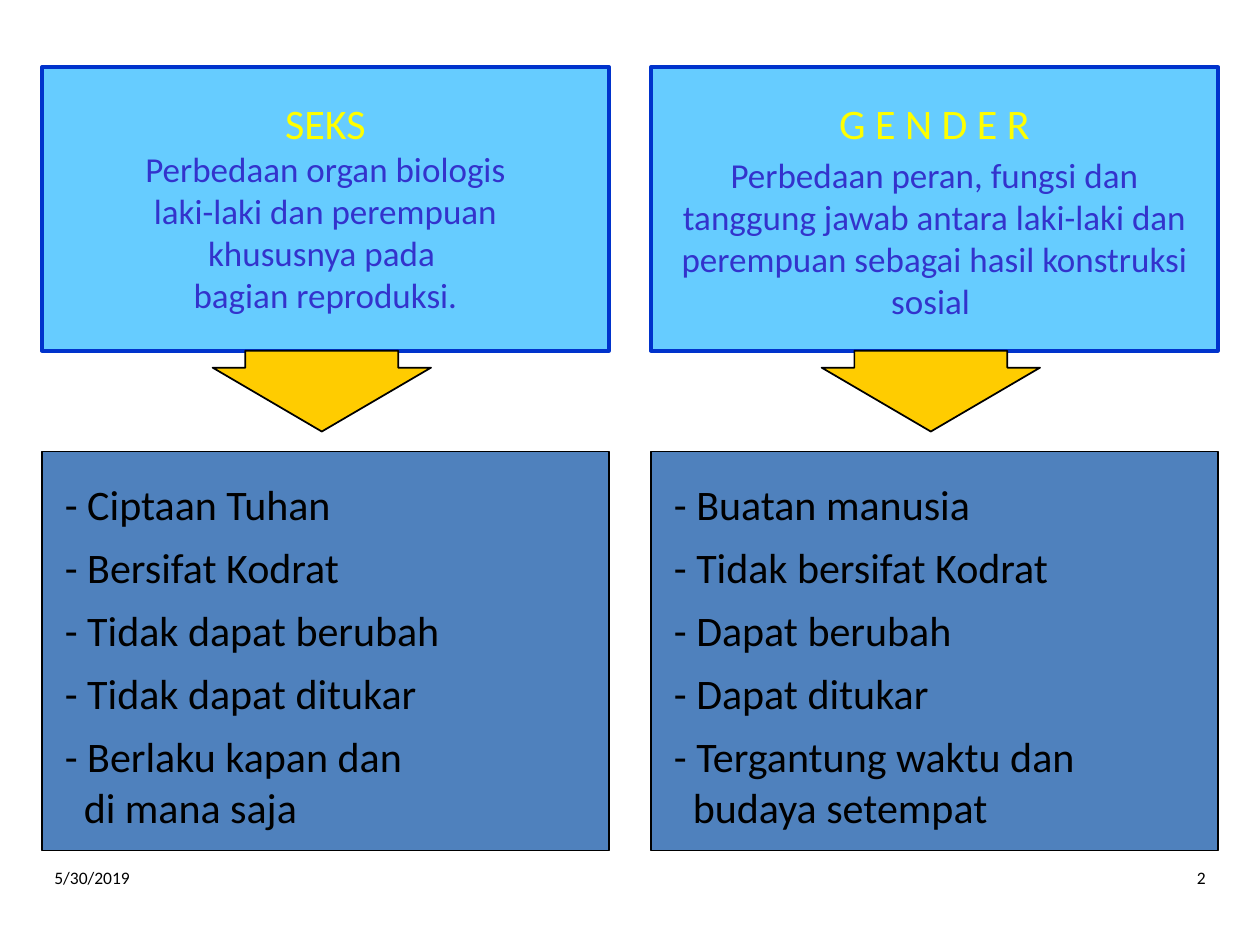
from pptx import Presentation, util as u
from pptx.dml.color import RGBColor
from pptx.enum import shapes, text

# Grid of 120 columns by 90 rows on a 10 x 7.5 inch slide
CELL = u.Inches(10) // 120
SHAPE = shapes.MSO_SHAPE
ALIGN = text.PP_ALIGN

HEADING = {"size": u.Pt(24), "color": "FFFF00"}
DEFINITION = {"size": u.Pt(20), "color": "3333CC"}
TRAIT = {"size": u.Pt(24), "color": "000000"}
FOOTER = {"size": u.Pt(10), "color": "000000"}

COLUMNS = [
    {
        "left": 4,
        "heading": "SEKS",
        "lines": ["Perbedaan organ biologis", "laki-laki dan perempuan",
                  "khususnya pada ", "bagian reproduksi."],
        "definition": None,
        "traits": [["- Ciptaan Tuhan"], ["- Bersifat Kodrat"],
                   ["- Tidak dapat berubah"], ["- Tidak dapat ditukar"],
                   ["- Berlaku kapan dan", "di mana saja"]],
    },
    {
        "left": 62,
        "heading": "G E N D E R",
        "lines": [],
        "definition": "Perbedaan peran, fungsi dan tanggung jawab antara "
                      "laki-laki dan perempuan sebagai hasil konstruksi sosial ",
        "traits": [["- Buatan manusia"], ["- Tidak bersifat Kodrat"],
                   ["- Dapat berubah"], ["- Dapat ditukar"],
                   ["- Tergantung waktu dan", "budaya setempat"]],
    },
]


def rgb(value):
    return RGBColor.from_string(value)


def grid(*cells):
    return [int(cell * CELL) for cell in cells]


def write(frame, lines, align=ALIGN.LEFT):
    """Fill a text frame with one paragraph per (words, format) pair."""
    for index, (words, style) in enumerate(lines):
        paragraph = frame.paragraphs[0] if index == 0 else frame.add_paragraph()
        paragraph.alignment = align
        run = paragraph.add_run()
        run.text = words
        for name, value in {"name": "Calibri", "size": style["size"]}.items():
            setattr(run.font, name, value)
        run.font.color.rgb = rgb(style["color"])


def add_text(slide, box, lines, align=ALIGN.LEFT):
    frame = slide.shapes.add_textbox(*grid(*box)).text_frame
    frame.word_wrap = True
    write(frame, lines, align)
    return frame


def add_block(slide, kind, box, fill, line, width):
    shape = slide.shapes.add_shape(kind, *grid(*box))
    shape.shadow.inherit = False
    shape.fill.solid()
    shape.fill.fore_color.rgb = rgb(fill)
    shape.line.color.rgb = rgb(line)
    shape.line.width = u.Pt(width)
    return shape


def add_header(slide, box, column):
    left, top, width, height = box
    frame = add_block(slide, SHAPE.RECTANGLE, box, "66CCFF", "0033CC", 2.25).text_frame
    settings = {"word_wrap": False, "vertical_anchor": text.MSO_ANCHOR.TOP,
                "margin_top": u.Inches(0.24)}
    for name, value in settings.items():
        setattr(frame, name, value)
    lines = [(words, DEFINITION) for words in column["lines"]]
    write(frame, [(column["heading"], HEADING)] + lines, ALIGN.CENTER)
    if column["definition"]:
        add_text(slide, (left + 1, top + 7.6, width - 2, height - 9.8),
                 [(column["definition"], DEFINITION)], ALIGN.CENTER)


def add_arrow(slide, box):
    arrow = add_block(slide, SHAPE.DOWN_ARROW, box, "FFCC00", "000000", 1)
    arrow.adjustments[0], arrow.adjustments[1] = 0.7, 0.79


def add_traits(slide, box, traits):
    left, top, width, height = box
    add_block(slide, SHAPE.RECTANGLE, box, "4F81BD", "000000", 0.75)
    for row, lines in enumerate(traits):
        frame = add_text(slide, (left + 1, top + 2 + 6 * row, width - 2, 6 * len(lines)),
                         [(words, TRAIT) for words in lines])
        # Second line of a trait aligns under its words
        for paragraph in frame.paragraphs[1:]:
            properties = paragraph._p.get_or_add_pPr()
            properties.set("marL", str(u.Inches(0.15)))
            properties.set("indent", "0")


def add_footer(slide, box):
    left, top, width, height = box
    add_text(slide, (left, top, 30, height), [("5/30/2019", FOOTER)])
    add_text(slide, (left + width - 30, top, 30, height), [("2", FOOTER)], ALIGN.RIGHT)


def main():
    presentation = Presentation()
    presentation.slide_width, presentation.slide_height = grid(120, 90)
    slide = presentation.slides.add_slide(presentation.slide_layouts[6])

    # Each column: definition, arrow, traits
    for column in COLUMNS:
        left = column["left"]
        add_header(slide, (left, 6.4, 54, 27), column)
        add_arrow(slide, (left + 16.25, 33.4, 20.8, 7.7))
        add_traits(slide, (left, 43, 54, 38), column["traits"])

    # Date and slide number
    add_footer(slide, (4, 82, 112, 6.25))
    presentation.save("out.pptx")


if __name__ == "__main__":
    main()
